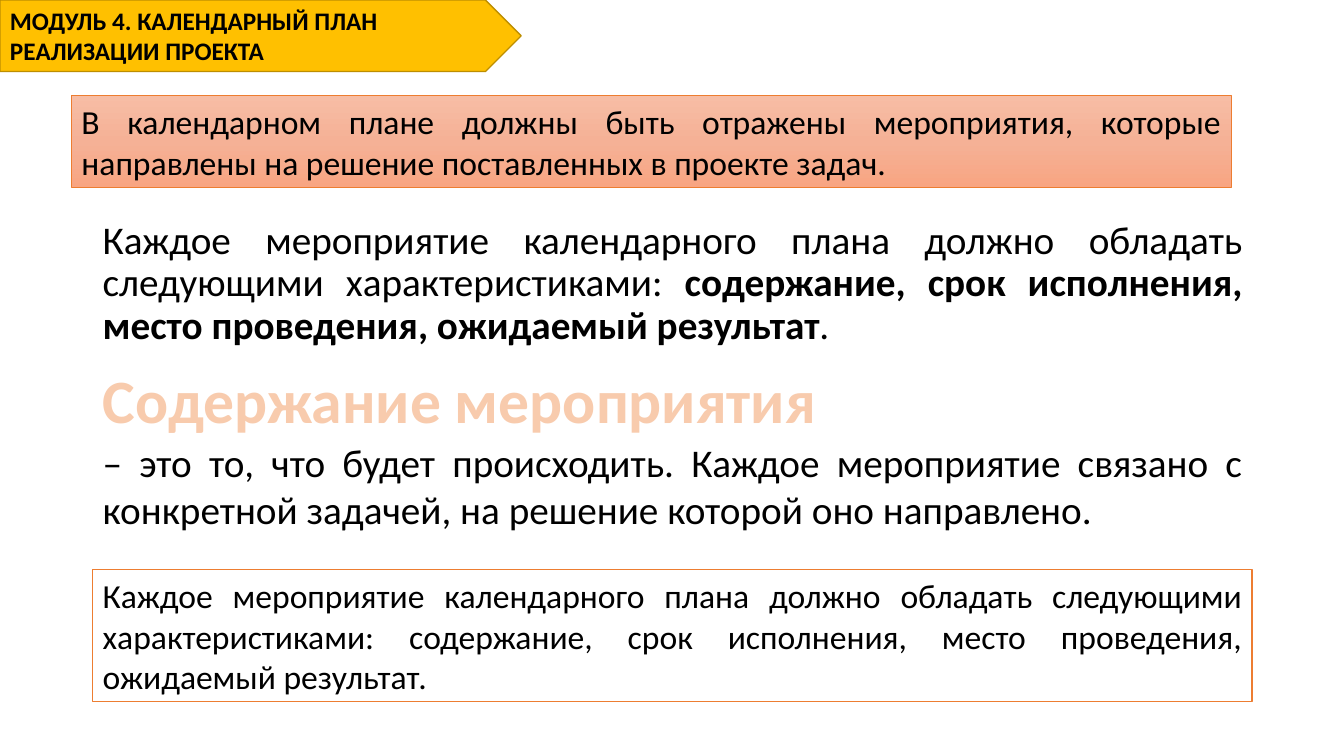
from copy import deepcopy

from lxml import etree
from pptx import Presentation
from pptx.dml.color import RGBColor
from pptx.enum.shapes import MSO_SHAPE as Shape
from pptx.enum.text import MSO_ANCHOR as Anchor, MSO_AUTO_SIZE as AutoSize, PP_ALIGN as Align
from pptx.oxml.ns import qn
from pptx.util import Inches, Pt

ORANGE = "ED7D31"
LEFT, WIDTH = 0.92, 11.5


def color(value):
    return RGBColor.from_string(value)


def write(frame, *parts, size=28, ink="000000", bold=False, align=Align.JUSTIFY,
          spacing=None, anchor=Anchor.TOP, grow=True, outline=None):
    frame.word_wrap = True
    frame.vertical_anchor = anchor
    frame.auto_size = AutoSize.SHAPE_TO_FIT_TEXT if grow else AutoSize.NONE
    paragraph = frame.paragraphs[0]
    paragraph.alignment = align
    if spacing:
        paragraph.line_spacing = spacing
    for index, part in enumerate(parts):
        run = paragraph.add_run()
        run.text = part
        run.font.name = "Calibri"
        run.font.size = Pt(size)
        run.font.bold = bold or index % 2 == 1
        run.font.color.rgb = color(ink)
        if outline:
            edge = etree.Element(qn("a:ln"), w=str(Pt(1.75)))
            fill = etree.SubElement(edge, qn("a:solidFill"))
            etree.SubElement(fill, qn("a:srgbClr"), val=outline)
            run.font._element.insert(0, edge)


class PlanSlide:
    def __init__(self, deck):
        self.slide = deck.slides.add_slide(deck.slide_layouts[6])

    def text(self, box, *parts, **style):
        area = self.slide.shapes.add_textbox(*map(Inches, box))
        write(area.text_frame, *parts, **style)

    def panel(self, box, text, fills, line, line_width=1, kind=Shape.RECTANGLE, **style):
        panel = self.slide.shapes.add_shape(kind, *map(Inches, box))
        panel.shadow.inherit = False
        panel.line.color.rgb = color(line)
        panel.line.width = Pt(line_width)
        if len(fills) == 1:
            panel.fill.solid()
            panel.fill.fore_color.rgb = color(fills[0])
        else:
            self.shade(panel, fills)
        write(panel.text_frame, text, anchor=Anchor.MIDDLE, **style)

    def shade(self, panel, fills):
        panel.fill.gradient()
        panel.fill.gradient_angle = 270
        stops = panel._element.spPr.find(qn("a:gradFill")).find(qn("a:gsLst"))
        for _ in fills[2:]:
            stops.append(deepcopy(stops[-1]))
        for index, (stop, fill) in enumerate(zip(panel.fill.gradient_stops, fills)):
            stop.position = index / (len(fills) - 1)
            stop.color.rgb = color(fill)


def main():
    deck = Presentation()
    deck.slide_width, deck.slide_height = Inches(13.33), Inches(7.5)
    plan = PlanSlide(deck)
    plan.text((LEFT, 3.52, 8.03, 0.97), "Содержание мероприятия", size=44, ink="F8CBAD",
              bold=True, align=Align.LEFT, spacing=0.9, anchor=Anchor.MIDDLE,
              grow=False, outline=ORANGE)
    plan.text((LEFT, 2.14, WIDTH, 1.47),
              "Каждое мероприятие календарного плана должно обладать следующими характеристиками: ",
              "содержание, срок исполнения, место проведения, ожидаемый результат",
              ". ", spacing=0.9, grow=False)
    plan.panel((0, 0, 5.17, 0.71), "МОДУЛЬ 4. КАЛЕНДАРНЫЙ ПЛАН РЕАЛИЗАЦИИ ПРОЕКТА",
               ["FFC000"], "BD8E00", kind=Shape.PENTAGON, size=18, bold=True, align=Align.LEFT)
    plan.panel((0.71, 0.95, WIDTH, 0.91),
               "В календарном плане должны быть отражены мероприятия, которые направлены "
               "на решение поставленных в проекте задач.",
               ["F7BDA5", "F5B196", "F8A582"], ORANGE, line_width=0.5, size=24)
    plan.text((LEFT, 4.3, WIDTH, 1.04),
              "– это то, что будет происходить. Каждое мероприятие связано с конкретной "
              "задачей, на решение которой оно направлено.")
    plan.panel((LEFT, 5.65, WIDTH, 1.31),
               "Каждое мероприятие календарного плана должно обладать следующими "
               "характеристиками: содержание, срок исполнения, место проведения, "
               "ожидаемый результат.", ["FFFFFF"], ORANGE, size=24)
    deck.save("out.pptx")


if __name__ == "__main__":
    main()
